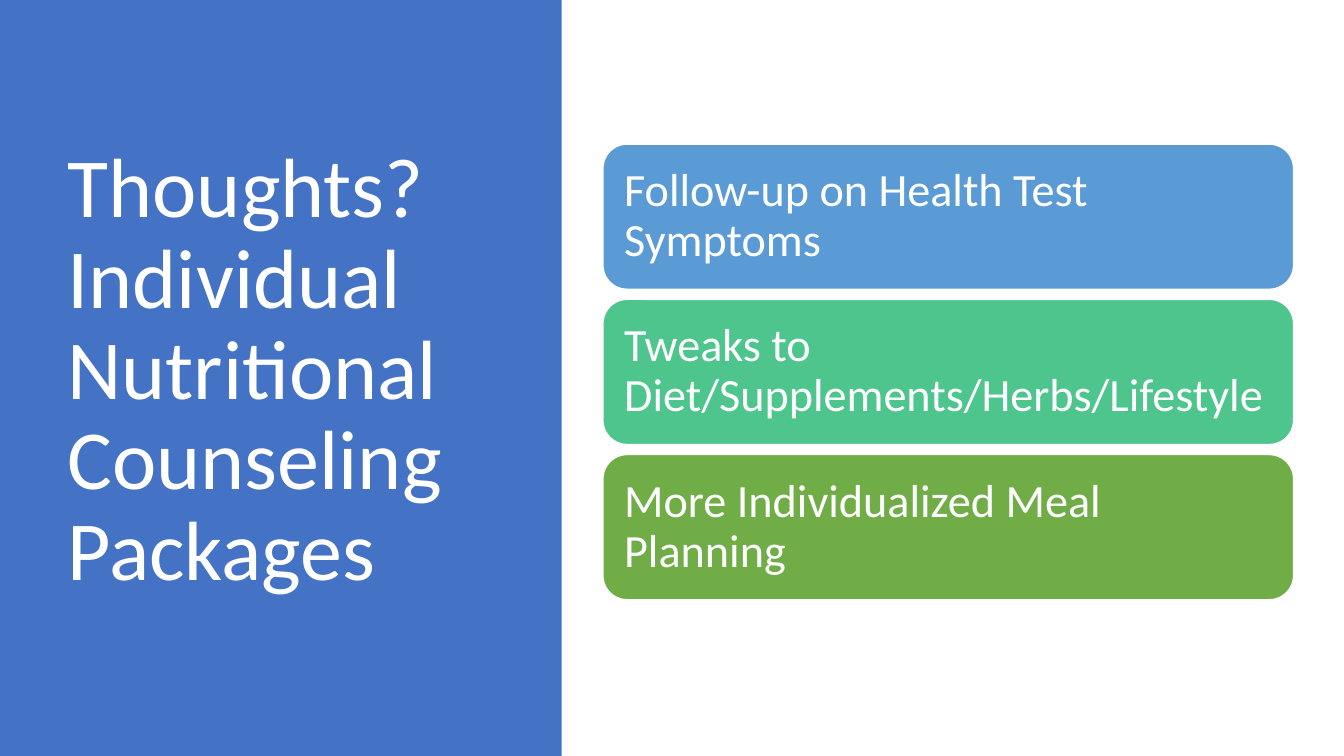
from dataclasses import dataclass

from pptx import Presentation
from pptx.dml.color import RGBColor
from pptx.enum.shapes import MSO_SHAPE
from pptx.enum.text import MSO_ANCHOR, MSO_AUTO_SIZE, PP_ALIGN
from pptx.shapes.autoshape import Shape
from pptx.slide import Slide
from pptx.util import Inches, Pt

WHITE = "FFFFFF"
PANEL_BLUE = "4472C4"
FONT_NAME = "Calibri"
CARD_LEFT, CARD_TOP = 5.98, 1.43
CARD_WIDTH, CARD_HEIGHT = 6.85, 1.44
CARD_PITCH = 1.54
CARD_INSET = 0.14


@dataclass
class Card:
    text: str
    fill: str


CARDS = [
    Card("Follow-up on Health Test Symptoms", "5B9BD5"),
    Card("Tweaks to Diet/Supplements/Herbs/Lifestyle", "4DC58D"),
    Card("More Individualized Meal Planning", "70AD47"),
]


def color(value: str) -> RGBColor:
    return RGBColor.from_string(value)


def set_attributes(target: object, values: dict) -> None:
    for name, value in values.items():
        setattr(target, name, value)


def format_text(shape: Shape, size: float) -> None:
    set_attributes(shape.text_frame, {
        "word_wrap": True,
        "auto_size": MSO_AUTO_SIZE.NONE,
        "vertical_anchor": MSO_ANCHOR.MIDDLE,
    })
    for paragraph in shape.text_frame.paragraphs:
        set_attributes(paragraph, {"alignment": PP_ALIGN.LEFT, "line_spacing": 0.9})
        for run in paragraph.runs:
            set_attributes(run.font, {"name": FONT_NAME, "size": Pt(size)})
            run.font.color.rgb = color(WHITE)


def add_filled_shape(slide: Slide, kind: MSO_SHAPE, left: float, top: float,
                     width: float, height: float, fill: str) -> Shape:
    shape = slide.shapes.add_shape(
        kind, Inches(left), Inches(top), Inches(width), Inches(height))
    shape.shadow.inherit = False
    shape.fill.solid()
    shape.fill.fore_color.rgb = color(fill)
    shape.line.fill.background()
    return shape


def add_title(slide: Slide) -> None:
    title = slide.shapes.title
    set_attributes(title, {
        "left": Inches(0.57), "top": Inches(0.68),
        "width": Inches(4.16), "height": Inches(6.02),
    })
    paragraph = title.text_frame.paragraphs[0]
    paragraph.add_run().text = "Thoughts?"
    paragraph.add_line_break()
    paragraph.add_run().text = "Individual Nutritional Counseling Packages"
    format_text(title, 60)


def add_card(slide: Slide, card: Card, top: float) -> None:
    shape = add_filled_shape(slide, MSO_SHAPE.ROUNDED_RECTANGLE, CARD_LEFT, top,
                             CARD_WIDTH, CARD_HEIGHT, card.fill)
    shape.line.color.rgb = color(WHITE)
    shape.line.width = Pt(1)
    shape.text_frame.text = card.text
    sides = ("left", "top", "right", "bottom")
    set_attributes(shape.text_frame,
                   {f"margin_{side}": Inches(CARD_INSET) for side in sides})
    format_text(shape, 33)


def main() -> None:
    presentation = Presentation()
    presentation.slide_width = Inches(13.33)
    presentation.slide_height = Inches(7.5)
    slide = presentation.slides.add_slide(presentation.slide_layouts[5])

    # Title on a coloured panel, with the panel placed behind it
    panel = add_filled_shape(slide, MSO_SHAPE.RECTANGLE, 0, 0, 5.57, 7.5, PANEL_BLUE)
    slide.shapes.title.element.addprevious(panel.element)
    add_title(slide)

    # Stack of cards
    for index, card in enumerate(CARDS):
        add_card(slide, card, CARD_TOP + index * CARD_PITCH)

    presentation.save("out.pptx")


if __name__ == "__main__":
    main()
